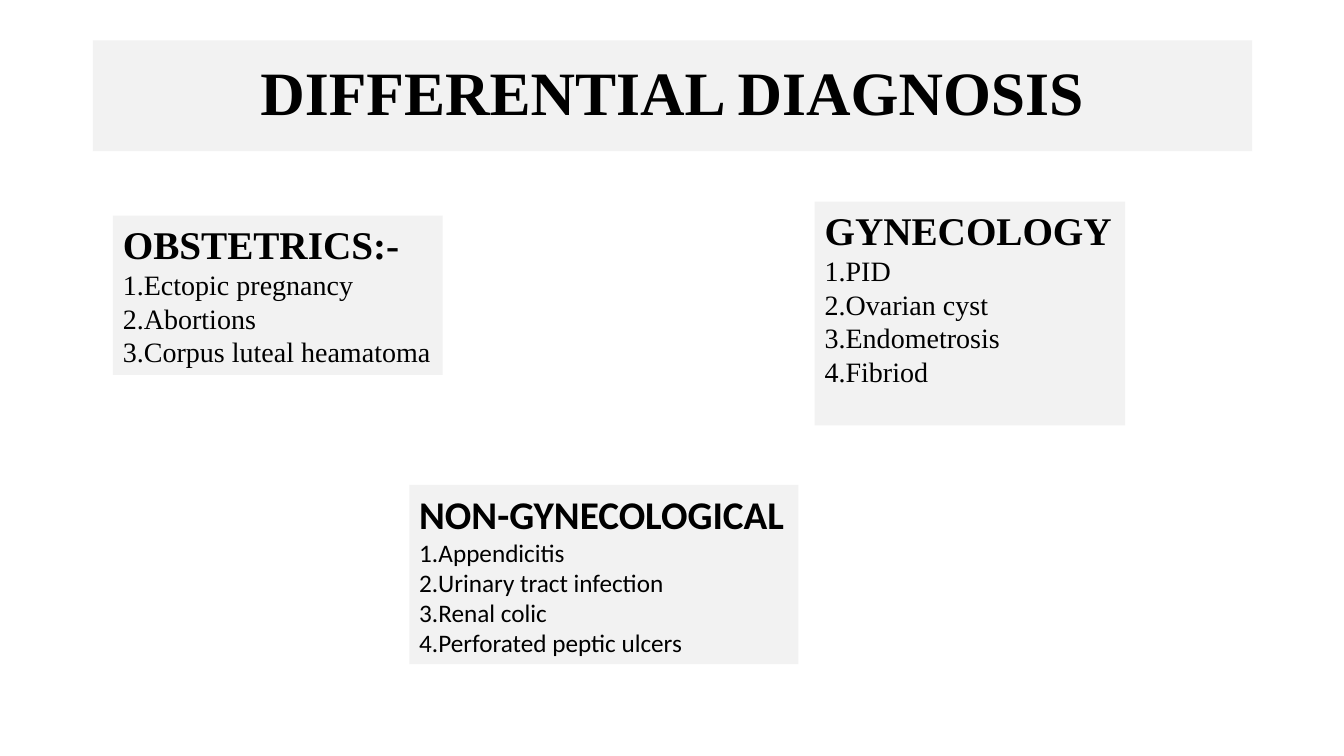
from pptx import Presentation
from pptx.dml.color import RGBColor
from pptx.enum.text import MSO_ANCHOR, MSO_AUTO_SIZE, PP_ALIGN
from pptx.util import Emu, Pt

EMU_PER_PX = 9144  # 100 px to the inch
TITLE_ONLY = 5
CENTER = PP_ALIGN.CENTER
MIDDLE = MSO_ANCHOR.MIDDLE
FIXED_SIZE = MSO_AUTO_SIZE.NONE

SERIF = "Times New Roman"
SANS = "Calibri"

# heading, box (left, top, width, height), font, item size, items
DIAGNOSIS_GROUPS = [
    ("OBSTETRICS:-", (112, 214, 327, 158), SERIF, 20,
     ["Ectopic pregnancy", "Abortions", "Corpus luteal heamatoma"]),
    ("GYNECOLOGY", (808, 200, 308, 222), SERIF, 20,
     ["PID", "Ovarian cyst", "Endometrosis", "Fibriod"]),
    ("NON-GYNECOLOGICAL", (406, 481, 386, 178), SANS, 18,
     ["Appendicitis", "Urinary tract infection", "Renal colic",
      "Perforated peptic ulcers"]),
]


def px(length):
    return Emu(length * EMU_PER_PX)


def color(hex_string):
    return RGBColor.from_string(hex_string)


class SlideBuilder:
    panel_fill = "F2F2F2"
    text_color = "000000"
    title_size = 44
    heading_size = 28

    def __init__(self, presentation):
        self.slide = presentation.slides.add_slide(
            presentation.slide_layouts[TITLE_ONLY])

    def fill_panel(self, shape):
        shape.fill.solid()
        shape.fill.fore_color.rgb = color(self.panel_fill)

    def add_run(self, paragraph, text, font_name, size, bold=False):
        run = paragraph.add_run()
        run.text = text
        run.font.name = font_name
        run.font.size = Pt(size)
        run.font.bold = bold
        run.font.color.rgb = color(self.text_color)

    def title(self, text, box):
        shape = self.slide.shapes.title
        shape.left, shape.top, shape.width, shape.height = map(px, box)
        self.fill_panel(shape)
        frame = shape.text_frame
        frame.vertical_anchor = MIDDLE
        frame.auto_size = FIXED_SIZE
        paragraph = frame.paragraphs[0]
        paragraph.alignment = CENTER
        paragraph.line_spacing = 0.9
        self.add_run(paragraph, text, SERIF, self.title_size, bold=True)

    def numbered_panel(self, heading, box, font_name, item_size, items):
        """Add a filled box with a bold heading above numbered lines."""
        shape = self.slide.shapes.add_textbox(*map(px, box))
        self.fill_panel(shape)
        frame = shape.text_frame
        frame.word_wrap = True
        frame.auto_size = FIXED_SIZE
        frame.margin_right = 0
        self.add_run(frame.paragraphs[0], heading, font_name,
                     self.heading_size, bold=True)
        for number, item in enumerate(items, start=1):
            self.add_run(frame.add_paragraph(), f"{number}.{item}",
                         font_name, item_size)


def main():
    presentation = Presentation()
    presentation.slide_width = px(1333)
    presentation.slide_height = px(750)
    builder = SlideBuilder(presentation)
    builder.title("DIFFERENTIAL DIAGNOSIS", (92, 40, 1150, 110))
    for group in DIAGNOSIS_GROUPS:
        builder.numbered_panel(*group)
    presentation.save("out.pptx")


if __name__ == "__main__":
    main()
